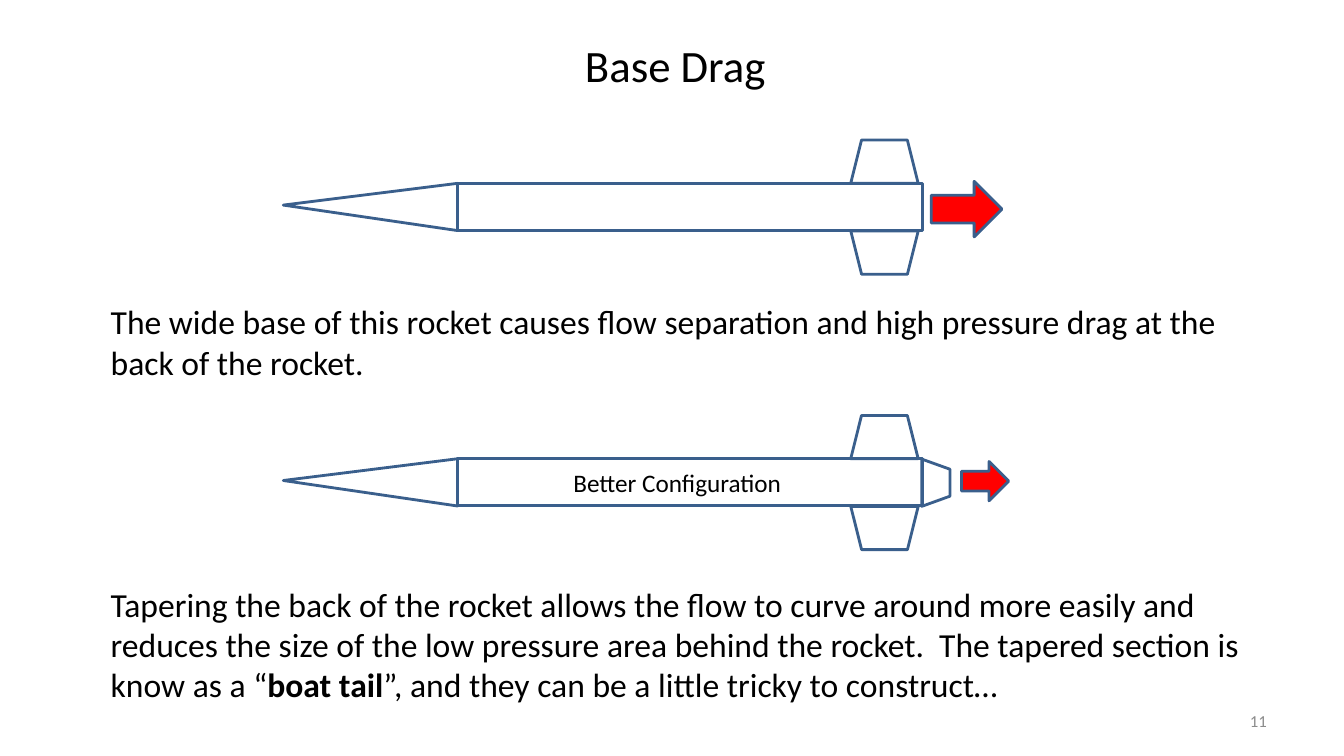
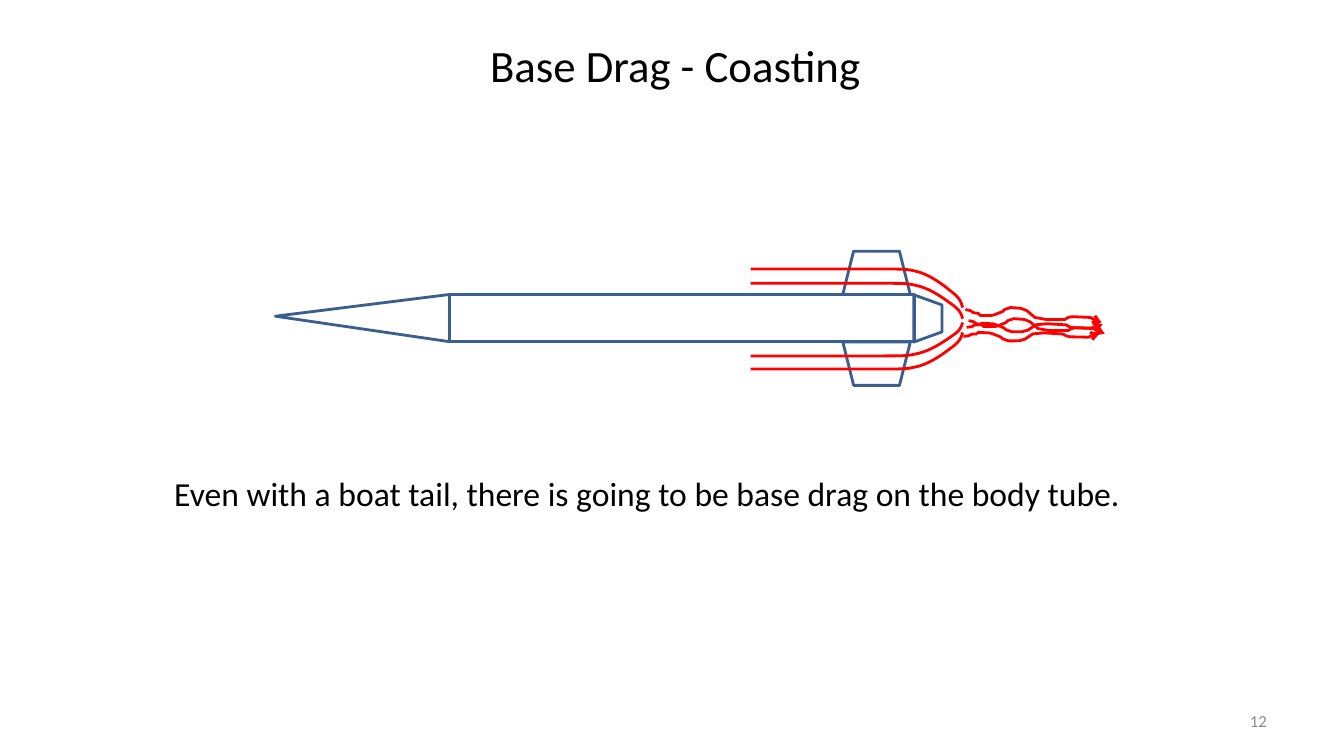
from dataclasses import dataclass

import lxml.etree
import pptx
import pptx.dml.color
import pptx.enum.shapes
import pptx.enum.text
import pptx.oxml.ns
import pptx.util

Cm = pptx.util.Cm
Shape = pptx.enum.shapes.MSO_SHAPE
Align = pptx.enum.text.PP_ALIGN
Anchor = pptx.enum.text.MSO_ANCHOR

FONT = "Calibri"
BLACK, GREY, RED, OUTLINE = "000000", "8C8C8C", "FF0000", "3A5F8C"
LINE_WIDTH = 2
TITLE_ONLY = 5


@dataclass
class Frame:
    """A rectangle in centimetres."""
    left: float
    top: float
    width: float
    height: float

    def shifted(self, right: float, down: float) -> "Frame":
        return Frame(self.left + right, self.top + down, self.width, self.height)

    def lengths(self) -> list:
        return [Cm(value) for value in (self.left, self.top, self.width, self.height)]


@dataclass
class Part:
    """A rocket part, placed relative to the top left of the body tube."""
    kind: Shape
    frame: Frame
    rotation: float = 0
    adjustment: float | None = None


@dataclass
class Stream:
    """Smooth air running along the body, then bending towards the axis."""
    start_y: float
    end_y: float


@dataclass
class Wake:
    """A wavy trail: the wave is stretched by height and tilted downwards."""
    left: float
    top: float
    height: float = 1
    tilt: float = 0


TITLE_FRAME = Frame(10.82, 0.81, 12.4, 1.63)
NUMBER_FRAME = Frame(24.28, 17.65, 7.9, 1.02)

ROCKET = [
    Part(Shape.RECTANGLE, Frame(0, 0, 11.71, 1.19)),
    Part(Shape.ISOSCELES_TRIANGLE, Frame(-2.79, -1.6, 1.19, 4.39), 270, 0.54),
    Part(Shape.TRAPEZOID, Frame(9.91, -1.09, 1.7, 1.09)),
    Part(Shape.TRAPEZOID, Frame(9.91, 1.2, 1.7, 1.09), 180),
]
BOAT_TAIL = Part(Shape.TRAPEZOID, Frame(11.46, 0.25, 1.19, 0.71), 90, 0.36)

# Streams: x position and share of the total bend, as Bézier control points
STREAM_LEFT = 18.92
STREAM_CURVES = [
    [(22.15, 0), (22.86, 0), (22.86, 0), (23.16, 0.08)],
    [(23.16, 0.08), (23.5, 0.18), (23.85, 0.48), (24.03, 0.63)],
    [(24.03, 0.63), (24.21, 0.78), (24.23, 0.89), (24.26, 1)],
]
STREAMS = [Stream(7.14, 8.03), Stream(6.78, 7.75), Stream(8.97, 8.13), Stream(9.3, 8.38)]

WAVE = [
    (0, 0), (0.13, 0.03), (0.2, 0.08), (0.33, 0.1), (0.38, 0.15), (0.66, 0.15),
    (0.74, 0.13), (0.94, 0.05), (0.99, 0), (1.14, -0.05), (1.4, -0.03), (1.55, 0.03),
    (1.75, 0.2), (2.03, 0.25), (2.51, 0.25), (2.59, 0.2), (2.69, 0.18), (3.15, 0.2),
    (3.23, 0.25), (3.3, 0.25), (3.38, 0.3), (3.43, 0.33),
]
WAKES = [
    Wake(24.33, 7.8), Wake(24.41, 8.08),
    Wake(24.28, 8.48, -0.85, 0.06), Wake(24.36, 8.25, -0.85, 0.06),
]


def color(value: str) -> pptx.dml.color.RGBColor:
    return pptx.dml.color.RGBColor.from_string(value)


def style_text(box, size: float, text_color: str = BLACK, align=Align.LEFT) -> None:
    box.text_frame.word_wrap = True
    for para in box.text_frame.paragraphs:
        para.alignment = align
        for span in para.runs:
            span.font.name = FONT
            span.font.size = pptx.util.Pt(size)
            span.font.color.rgb = color(text_color)


def add_text(page, frame: Frame, text: str, size: float = 24, bold: str = "",
             text_color: str = BLACK, align=Align.LEFT, anchor=Anchor.TOP) -> None:
    """Add a text box; the phrase given as bold is set in bold."""
    box = page.shapes.add_textbox(*frame.lengths())
    box.text_frame.vertical_anchor = anchor
    para = box.text_frame.paragraphs[0]
    for piece in text.partition(bold) if bold else [text]:
        span = para.add_run()
        span.text = piece
        span.font.bold = piece == bold
    style_text(box, size, text_color, align)


def style_shape(shape, line_color: str, fill_color: str | None = None) -> None:
    shape.shadow.inherit = False
    shape.line.color.rgb = color(line_color)
    shape.line.width = pptx.util.Pt(LINE_WIDTH)
    if fill_color:
        shape.fill.solid()
        shape.fill.fore_color.rgb = color(fill_color)
    else:
        shape.fill.background()


def add_rocket(page, left: float, top: float, boat_tail: bool) -> None:
    for part in ROCKET + [BOAT_TAIL] * boat_tail:
        shape = page.shapes.add_shape(part.kind, *part.frame.shifted(left, top).lengths())
        shape.rotation = part.rotation
        if part.adjustment is not None:
            shape.adjustments[0] = part.adjustment
        style_shape(shape, OUTLINE)


def add_drag_arrow(page, frame: Frame) -> None:
    arrow = page.shapes.add_shape(Shape.RIGHT_ARROW, *frame.lengths())
    style_shape(arrow, OUTLINE, RED)


def add_path(page, points: list, arrow: bool = False) -> None:
    """Draw an open red line through points given in centimetres."""
    start, *others = [(Cm(x), Cm(y)) for x, y in points]
    builder = page.shapes.build_freeform(*start, scale=1.0)
    builder.add_line_segments(others, close=False)
    shape = builder.convert_to_shape()
    style_shape(shape, RED)
    line = shape.line._get_or_add_ln()
    lxml.etree.SubElement(line, pptx.oxml.ns.qn("a:round"))
    if arrow:
        lxml.etree.SubElement(line, pptx.oxml.ns.qn("a:tailEnd"), type="arrow")


def bezier(controls: list, steps: int = 8) -> list:
    """Points along a cubic curve, without its first point."""
    points = []
    for step in range(1, steps + 1):
        t = step / steps
        weights = ((1 - t) ** 3, 3 * t * (1 - t) ** 2, 3 * t * t * (1 - t), t ** 3)
        points.append(tuple(
            sum(weight * control[axis] for weight, control in zip(weights, controls))
            for axis in (0, 1)))
    return points


def add_stream(page, stream: Stream) -> None:
    profile = [(STREAM_LEFT, 0), STREAM_CURVES[0][0]]
    for controls in STREAM_CURVES:
        profile += bezier(controls)
    bend = stream.end_y - stream.start_y
    add_path(page, [(x, stream.start_y + share * bend) for x, share in profile])


def add_wake(page, wake: Wake) -> None:
    points = [(wake.left + x, wake.top + wake.height * y + wake.tilt * x) for x, y in WAVE]
    add_path(page, points, arrow=True)


def add_page(deck, title: str, number: int):
    page = deck.slides.add_slide(deck.slide_layouts[TITLE_ONLY])
    box = page.shapes.title
    box.left, box.top, box.width, box.height = TITLE_FRAME.lengths()
    box.text_frame.text = title
    box.text_frame.auto_size = pptx.enum.text.MSO_AUTO_SIZE.NONE
    style_text(box, 32, align=Align.CENTER)
    add_text(page, NUMBER_FRAME, str(number), 12, text_color=GREY,
             align=Align.RIGHT, anchor=Anchor.MIDDLE)
    return page


def add_comparison_page(deck) -> None:
    page = add_page(deck, "Base Drag", 11)
    # Wide base
    add_rocket(page, 11.53, 4.62, boat_tail=False)
    add_drag_arrow(page, Frame(23.47, 4.57, 1.78, 1.4))
    add_text(page, Frame(2.54, 7.47, 29.11, 2.31),
             "The wide base of this rocket causes flow separation and high pressure "
             "drag at the back of the rocket.")
    # Tapered base
    add_rocket(page, 11.53, 11.56, boat_tail=True)
    add_text(page, Frame(14.2, 11.66, 6.4, 1.02), "Better Configuration", 18)
    add_drag_arrow(page, Frame(24.23, 11.63, 1.19, 0.99))
    add_text(page, Frame(2.54, 14.58, 30.3, 3.33),
             "Tapering the back of the rocket allows the flow to curve around more easily "
             "and reduces the size of the low pressure area behind the rocket.  The tapered "
             "section is know as a “boat tail”, and they can be a little tricky to construct…",
             bold="boat tail")


def add_coasting_page(deck) -> None:
    page = add_page(deck, "Base Drag - Coasting", 12)
    add_rocket(page, 11.33, 7.42, boat_tail=True)
    add_text(page, Frame(4.14, 11.79, 24.71, 1.27),
             "Even with a boat tail, there is going to be base drag on the body tube.")
    # Air flow
    for stream in STREAMS:
        add_stream(page, stream)
    for wake in WAKES:
        add_wake(page, wake)


def main() -> None:
    deck = pptx.Presentation()
    deck.slide_width, deck.slide_height = Cm(33.87), Cm(19.05)
    add_comparison_page(deck)
    add_coasting_page(deck)
    deck.save("out.pptx")


if __name__ == "__main__":
    main()
